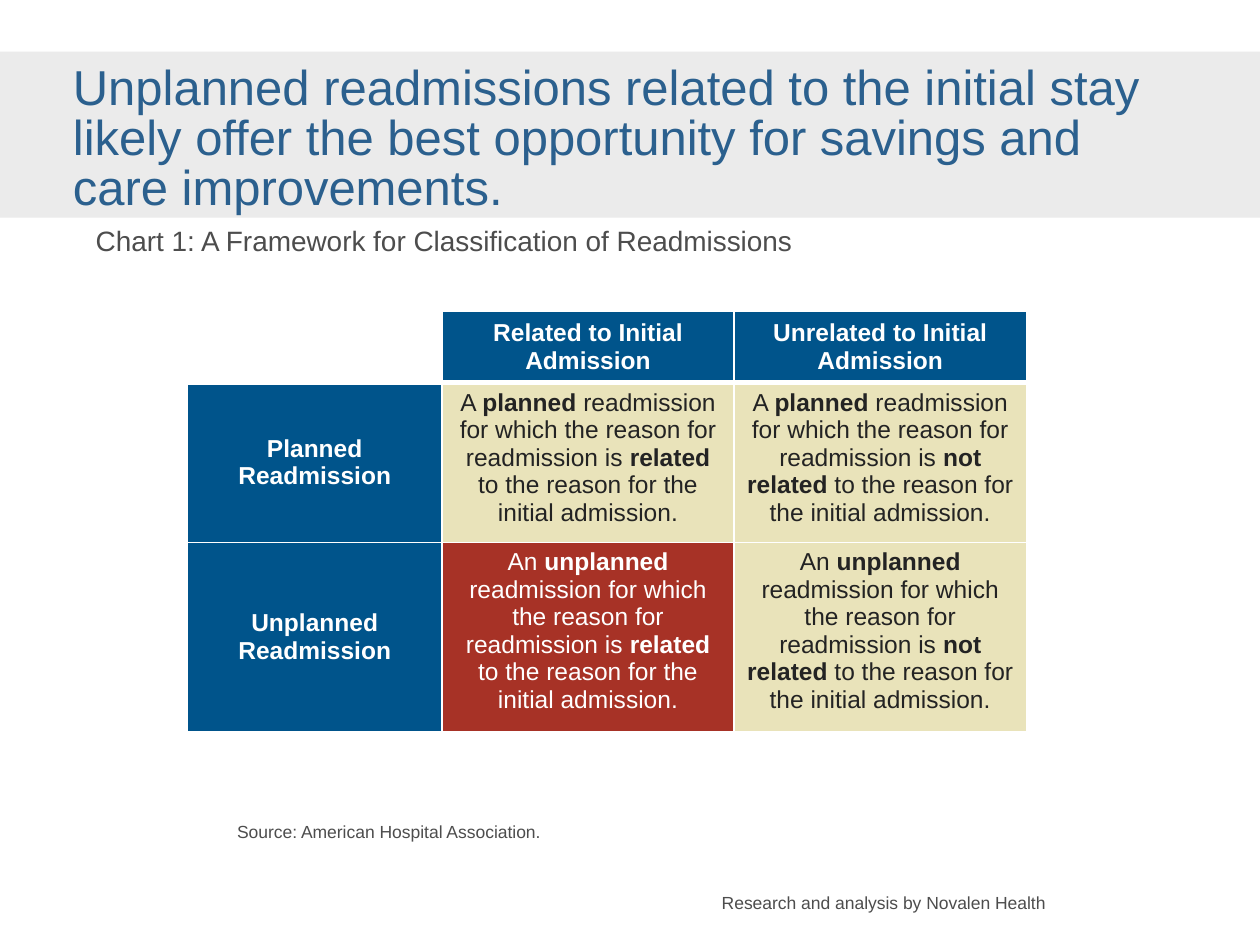
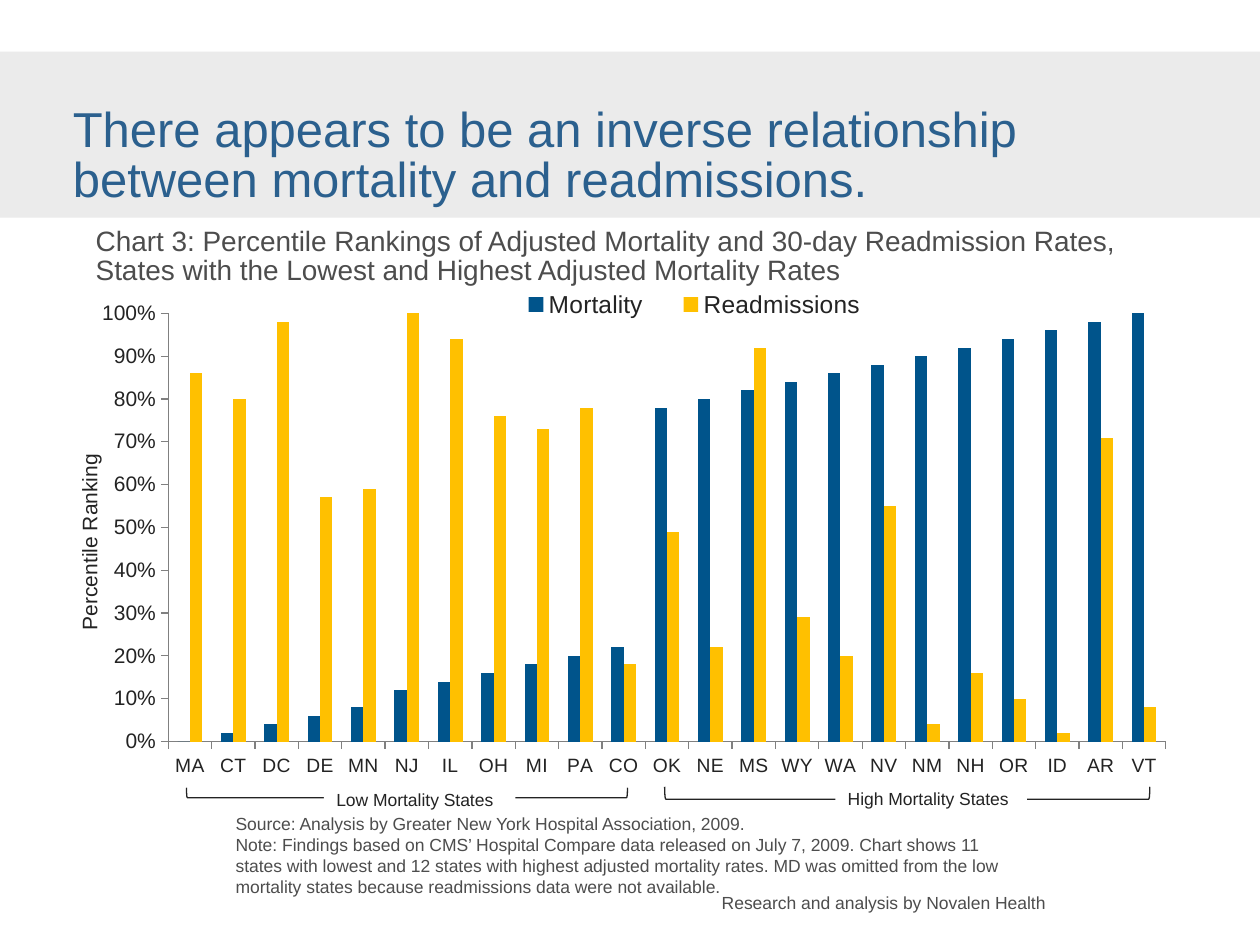
from dataclasses import dataclass
from lxml import etree
from pptx import Presentation
from pptx.chart.data import CategoryChartData
from pptx.dml.color import RGBColor as Rgb
from pptx.enum.chart import XL_CHART_TYPE as Kind, XL_LEGEND_POSITION as Spot, XL_TICK_MARK as Tick
from pptx.enum.shapes import MSO_SHAPE as Form
from pptx.enum.text import MSO_ANCHOR as Anchor, PP_ALIGN as Align
from pptx.oxml.ns import qn
from pptx.util import Cm, Pt


@dataclass(frozen=True)
class Theme:
    face: str = "Arial"
    band: str = "EBEBEB"
    title: str = "2B608E"
    grey: str = "4D4D4D"
    ink: str = "232323"
    blue: str = "00548B"
    sand: str = "E9E3BA"
    red: str = "A73226"
    gold: str = "FFC000"
    white: str = "FFFFFF"
    axis: str = "808080"
    head: int = 28
    sub: int = 16
    cell: int = 14
    scale: int = 12
    state: int = 11
    note: int = 10
    tight: float = 0.85


@dataclass(frozen=True)
class Box:
    x: float
    y: float
    w: float
    h: float

    def cm(self):
        return Cm(self.x), Cm(self.y), Cm(self.w), Cm(self.h)


T = Theme()
BAND = Box(0, 1.04, 25.4, 3.35)
FOOT = Box(14.55, 17.98, 6.71, 0.43)


def style(font, size, color, bold=None):
    font.name = T.face
    font.size = Pt(size)
    font.color.rgb = Rgb.from_string(color)
    font.bold = bold


def paint(fill, color):
    fill.solid()
    fill.fore_color.rgb = Rgb.from_string(color)


def write(slide, box, lines, size, color, space=None, anchor=Anchor.TOP):
    frame = slide.shapes.add_textbox(*box.cm()).text_frame
    frame.word_wrap = True
    frame.vertical_anchor = anchor
    frame.margin_left = frame.margin_right = frame.margin_top = frame.margin_bottom = 0
    for i, line in enumerate(lines):
        par = frame.add_paragraph() if i else frame.paragraphs[0]
        par.text = line
        par.line_spacing = space
        style(par.font, size, color)


def shape(slide, form, box, fill=None, line=None):
    item = slide.shapes.add_shape(form, *box.cm())
    item.shadow.inherit = False
    if fill:
        paint(item.fill, fill)
    else:
        item.fill.background()
    if line:
        item.line.color.rgb = Rgb.from_string(line)
        item.line.width = Pt(0.75)
    else:
        item.line.fill.background()
    return item


def base(deck, title, area, sub):
    slide = deck.slides.add_slide(deck.slide_layouts[6])
    shape(slide, Form.RECTANGLE, BAND, T.band)
    write(slide, FOOT, ["Research and analysis by Novalen Health"], T.note, T.grey)
    write(slide, area, [title], T.head, T.title, T.tight, Anchor.BOTTOM)
    write(slide, Box(1.93, 4.62, 20.78, 1.09), [sub], T.sub, T.grey, T.tight)
    return slide


def edge(cell, top, base):
    props = cell._tc.get_or_add_tcPr()
    for i, (side, wide) in enumerate(zip("LRTB", (1, 1, top, base))):
        line = etree.Element(qn(f"a:ln{side}"), w=str(Pt(wide)))
        fill = etree.SubElement(line, qn("a:solidFill"))
        etree.SubElement(fill, qn("a:srgbClr"), val=T.white)
        props.insert(i, line)


def mark(par, text):
    if "*" not in text:
        par.text = text
        return
    for i, part in enumerate(text.split("*")):
        run = par.add_run()
        run.text = part
        run.font.bold = i % 2 == 1


def matrix(slide, box, rows, cols, highs):
    grid = slide.shapes.add_table(len(rows), len(cols), *box.cm()).table
    grid.first_row = grid.horz_banding = False
    for col, wide in zip(grid.columns, cols):
        col.width = Cm(wide)
    for r, row in enumerate(rows):
        grid.rows[r].height = Cm(highs[r])
        for c, text in enumerate(row):
            cell = grid.cell(r, c)
            head = r == 0 or c == 0
            fill = T.blue if head else T.red if (r, c) == (2, 1) else T.sand
            if text:
                paint(cell.fill, fill)
                par = cell.text_frame.paragraphs[0]
                mark(par, text)
                par.alignment = Align.CENTER
                ink = T.ink if fill == T.sand else T.white
                style(par.font, T.cell, ink, head)
            else:
                cell.fill.background()
            if head:
                cell.vertical_anchor = Anchor.MIDDLE
            edge(cell, 3 if r == 1 else 1, 3 if r == 0 else 1)


def place(node, index, inner=False, **spots):
    old = node.find(qn("c:layout"))
    if old is not None:
        node.remove(old)
    layout = etree.Element(qn("c:layout"))
    manual = etree.SubElement(layout, qn("c:manualLayout"))
    if inner:
        etree.SubElement(manual, qn("c:layoutTarget"), val="inner")
    for key in "xy":
        etree.SubElement(manual, qn(f"c:{key}Mode"), val="edge")
    for key, value in spots.items():
        etree.SubElement(manual, qn(f"c:{key}"), val=str(value))
    node.insert(index, layout)


def ranks(slide, box, states, series):
    data = CategoryChartData(number_format="0%")
    data.categories = states
    for name, values, color in series:
        data.add_series(name, [v / 100 for v in values])
    chart = slide.shapes.add_chart(Kind.COLUMN_CLUSTERED, *box.cm(), data).chart
    style(chart.font, 18, T.ink)
    chart.has_title = False
    plot = chart.plots[0]
    plot.gap_width = 150
    plot.overlap = 0
    plot.vary_by_categories = False
    for bar, (name, values, color) in zip(plot.series, series):
        paint(bar.format.fill, color)
    across, up = chart.category_axis, chart.value_axis
    for axis, size in ((across, T.state), (up, T.scale)):
        axis.has_major_gridlines = False
        axis.major_tick_mark = Tick.OUTSIDE
        axis.minor_tick_mark = Tick.NONE
        axis.format.line.color.rgb = Rgb.from_string(T.axis)
        style(axis.tick_labels.font, size, T.ink)
    up.minimum_scale, up.maximum_scale, up.major_unit = 0, 1, 0.1
    up.tick_labels.number_format = "0%"
    up.tick_labels.number_format_is_linked = False
    par = up.axis_title.text_frame.paragraphs[0]
    par.text = "Percentile Ranking"
    style(par.font, T.scale, T.ink, False)
    chart.has_legend = True
    chart.legend.position = Spot.TOP
    chart.legend.include_in_layout = False
    style(chart.legend.font, T.cell, T.ink)
    root = chart._chartSpace
    place(next(root.iter(qn("c:plotArea"))), 0, True, x=0.089, y=0.057, w=0.855, h=0.823)
    place(next(root.iter(qn("c:legend"))), 1, x=0.37, y=0.01, w=0.34, h=0.06)
    place(next(up._element.iter(qn("c:title"))), 1, x=0.007, y=0.32)


def span(slide, box, text, shift):
    mid, cen = box.x + box.w / 2, box.y + box.h / 2
    tall = Box(mid - box.h / 2, cen - box.w / 2, box.h, box.w)
    shape(slide, Form.LEFT_BRACKET, tall, line=T.ink).rotation = 270
    tag = shape(slide, Form.RECTANGLE, Box(box.x + shift, box.y - 0.11, 3.86, 0.69), T.white)
    par = tag.text_frame.paragraphs[0]
    par.text = text
    par.alignment = Align.LEFT
    style(par.font, T.note, T.ink)


def frame(deck):
    slide = base(
        deck,
        "Unplanned readmissions related to the initial stay likely offer the best "
        "opportunity for savings and care improvements.",
        Box(1.47, 1.47, 21.64, 2.87),
        "Chart 1: A Framework for Classification of Readmissions",
    )
    tail = "readmission for which the reason for readmission is"
    end = "to the reason for the initial admission."
    rows = [["", "Related to Initial Admission", "Unrelated to Initial Admission"]]
    for head, lead in (("Planned\vReadmission", "A *planned*"),
                       ("Unplanned Readmission", "An *unplanned*")):
        rows.append([head] + [f"{lead} {tail} *{link}* {end}" for link in ("related", "not related")])
    matrix(slide, Box(3.78, 6.27, 16.91, 7.98), rows, (5.13, 5.89, 5.89), (1.36, 3.03, 3.59))
    write(slide, Box(4.78, 16.56, 15.42, 0.43),
          ["Source: American Hospital Association."], T.note, T.grey)


def inverse(deck):
    slide = base(
        deck,
        "There appears to be an inverse relationship between mortality and readmissions.",
        Box(1.47, 2.29, 22.86, 1.9),
        "Chart 3: Percentile Rankings of Adjusted Mortality and 30-day Readmission Rates, "
        "States with the Lowest and Highest Adjusted Mortality Rates",
    )
    states = "MA CT DC DE MN NJ IL OH MI PA CO OK NE MS WY WA NV NM NH OR ID AR VT".split()
    deaths = [*range(0, 9, 2), *range(12, 23, 2), *range(78, 101, 2)]
    returns = [86, 80, 98, 57, 59, 100, 94, 76, 73, 78, 18, 49,
               22, 92, 29, 20, 55, 4, 16, 10, 2, 71, 8]
    ranks(slide, Box(1.3, 5.72, 23.52, 10.49), states,
          (("Mortality", deaths, T.blue), ("Readmissions", returns, T.gold)))
    write(slide, Box(4.75, 16.38, 15.42, 1.7), [
        "Source: Analysis by Greater New York Hospital Association, 2009.",
        "Note: Findings based on CMS’ Hospital Compare data released on July 7, 2009. "
        "Chart shows 11 states with lowest and 12 states with highest adjusted mortality rates. "
        "MD was omitted from the low mortality states because readmissions data were not available.",
    ], T.note, T.grey)
    span(slide, Box(3.76, 15.88, 8.89, 0.2), "Low Mortality States", 2.77)
    span(slide, Box(13.4, 15.86, 9.78, 0.25), "High Mortality States", 3.44)


def main():
    deck = Presentation()
    deck.slide_width, deck.slide_height = Cm(25.4), Cm(19.05)
    frame(deck)
    inverse(deck)
    deck.save("out.pptx")


if __name__ == "__main__":
    main()
